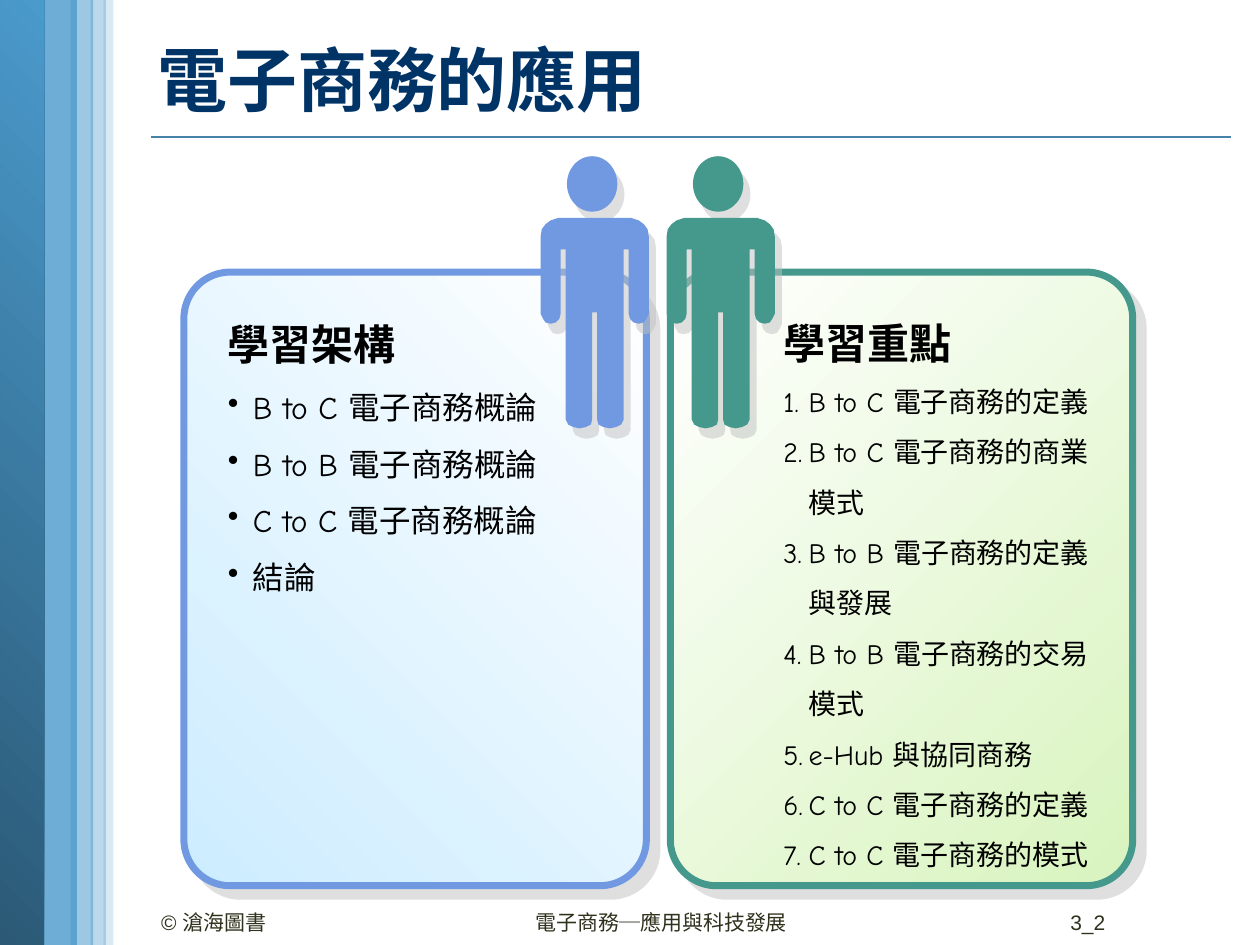
from dataclasses import dataclass

from lxml import etree
from pptx import Presentation
from pptx import util as u
from pptx.dml.color import RGBColor
from pptx.enum import shapes, text
from pptx.oxml.ns import qn


@dataclass(frozen=True)
class Theme:
    navy: str = "003366"
    rule: str = "4582A7"
    band: str = "4A9ACC"
    band_dark: str = "2B5976"
    blue: str = "7099E2"
    sky: str = "CCECFF"
    green: str = "44988C"
    lime: str = "D8F4BE"
    white: str = "FFFFFF"
    black: str = "000000"
    footer: str = "30311D"
    shadow: str = "C0C0C0"
    body_font: str = "Comic Neue"
    footer_font: str = "Arial"
    title_size: int = 40
    heading_size: int = 24
    left_size: int = 18
    right_size: int = 16
    footer_size: int = 12


theme = Theme()


def style_shape(shape, fill, angle=0, alpha=100, line=None, shadow=None):
    if isinstance(fill, tuple):
        shape.fill.gradient()
        shape.fill.gradient_angle = angle
        for stop, color, position in zip(shape.fill.gradient_stops, fill, (0, 1)):
            stop.color.rgb = RGBColor.from_string(color)
            stop.position = position
    else:
        shape.fill.solid()
        shape.fill.fore_color.rgb = RGBColor.from_string(fill)
        if alpha < 100:
            color = shape._element.spPr.find(qn("a:solidFill"))[0]
            etree.SubElement(color, qn("a:alpha"), val=str(alpha * 1000))
    if line:
        shape.line.color.rgb = RGBColor.from_string(line)
        shape.line.width = u.Pt(4)
    else:
        shape.line.fill.background()
    shape.shadow.inherit = False
    if shadow:
        distance, direction = shadow
        effects = shape._element.spPr.find(qn("a:effectLst"))
        outer = etree.SubElement(effects, qn("a:outerShdw"), blurRad="0",
                                 dist=str(u.Pt(distance)), dir=str(direction * 60000),
                                 algn="ctr", rotWithShape="0")
        color = etree.SubElement(outer, qn("a:srgbClr"), val=theme.shadow)
        etree.SubElement(color, qn("a:alpha"), val="50000")


def write_text(frame, words, size, font=theme.body_font, color=theme.black, bold=False,
               align=text.PP_ALIGN.LEFT, spacing=None, bullet=None, first=True):
    frame.word_wrap = True
    para = frame.paragraphs[0] if first else frame.add_paragraph()
    para.alignment = align
    if spacing:
        para.line_spacing = spacing
    if bullet:
        properties = para._p.get_or_add_pPr()
        properties.set("marL", str(u.Inches(0.2)))
        properties.set("indent", str(u.Inches(-0.2)))
        tag, attribute, value = bullet
        etree.SubElement(properties, qn(tag)).set(attribute, value)
    span = para.add_run()
    span.text = words
    span.font.name = font
    span.font.size = u.Pt(size)
    span.font.bold = bold
    span.font.color.rgb = RGBColor.from_string(color)


deck = Presentation()
deck.slide_width, deck.slide_height = u.Inches(10), u.Inches(7.5)
page = deck.slides.add_slide(deck.slide_layouts[6])

rule = page.shapes.add_connector(shapes.MSO_CONNECTOR.STRAIGHT, u.Inches(1.2), u.Inches(1.09),
                                 u.Inches(9.77), u.Inches(1.09))
rule.line.color.rgb = RGBColor.from_string(theme.rule)
rule.line.width = u.Pt(1)
etree.SubElement(rule._element.spPr, qn("a:effectLst"))

bands = [
    (0.3, 0.31, theme.band, 80),
    (-0.01, 0.36, (theme.band_dark, theme.band), 100),
    (0.82, 0.08, theme.band, 20),
    (0.56, 0.18, theme.band, 54),
    (0.72, 0.12, theme.band, 37),
]
for left, width, fill, alpha in bands:
    band = page.shapes.add_shape(shapes.MSO_SHAPE.RECTANGLE, u.Inches(left), 0,
                                 u.Inches(width), u.Inches(7.5))
    style_shape(band, fill, angle=45, alpha=alpha)

title = page.shapes.add_textbox(u.Inches(1.15), u.Inches(0.07), u.Inches(8.7), u.Inches(1.11))
title.text_frame.vertical_anchor = text.MSO_ANCHOR.MIDDLE
write_text(title.text_frame, "電子商務的應用", theme.title_size, color=theme.navy, bold=True)

half_body = [
    (-0.29, 1.73), (-0.35, 1.75), (-0.39, 1.78), (-0.42, 1.82), (-0.43, 1.88),
    (-0.43, 2.49), (-0.41, 2.53), (-0.39, 2.56), (-0.35, 2.57), (-0.31, 2.56),
    (-0.28, 2.53), (-0.27, 2.49), (-0.27, 1.98), (-0.23, 1.98), (-0.23, 3.33),
    (-0.21, 3.37), (-0.17, 3.39), (-0.12, 3.4), (-0.07, 3.39), (-0.03, 3.37),
    (-0.02, 3.33), (-0.02, 2.48),
]
body_outline = half_body + [(-x, y) for x, y in reversed(half_body)]

dots = ("a:buChar", "char", "•")
numbers = ("a:buAutoNum", "type", "arabicPeriod")
cards = [
    (1.46, theme.blue, (theme.sky, theme.white), 45, 4.72, (1.71, 2.28, 3.1, 2.52),
     "學習架構", theme.left_size, dots,
     ["B to C 電子商務概論", "B to B 電子商務概論", "C to C 電子商務概論", "結論"]),
    (5.32, theme.green, (theme.white, theme.lime), 315, 5.72, (6.12, 2.27, 2.83, 4.75),
     "學習重點", theme.right_size, numbers,
     ["B to C 電子商務的定義", "B to C 電子商務的商業模式", "B to B 電子商務的定義與發展",
      "B to B 電子商務的交易模式", "e-Hub 與協同商務", "C to C 電子商務的定義",
      "C to C 電子商務的模式"]),
]
for left, color, fill, angle, center, place, heading, size, bullet, items in cards:
    card = page.shapes.add_shape(shapes.MSO_SHAPE.ROUNDED_RECTANGLE, u.Inches(left),
                                 u.Inches(2.16), u.Inches(3.67), u.Inches(4.87))
    card.adjustments[0] = 0.1
    style_shape(card, fill, angle=angle, line=color, shadow=(8.5, 45))

    head = page.shapes.add_shape(shapes.MSO_SHAPE.OVAL, u.Inches(center - 0.22),
                                 u.Inches(1.24), u.Inches(0.4), u.Inches(0.44))
    points = [(u.Inches(center + x), u.Inches(y)) for x, y in body_outline]
    builder = page.shapes.build_freeform(*points[0])
    builder.add_line_segments(points[1:], close=True)
    for part in (head, builder.convert_to_shape()):
        style_shape(part, color, shadow=(7.2, 56))

    box = page.shapes.add_textbox(*map(u.Inches, place))
    write_text(box.text_frame, heading, theme.heading_size, bold=True, spacing=1.5)
    for item in items:
        write_text(box.text_frame, item, size, spacing=1.5, bullet=bullet, first=False)

footers = [
    (1.18, 2.33, "© 滄海圖書", text.PP_ALIGN.LEFT),
    (8.15, 0.72, "3_2", text.PP_ALIGN.RIGHT),
    (4.15, 2.36, "電子商務─應用與科技發展", text.PP_ALIGN.LEFT),
]
for left, width, words, align in footers:
    box = page.shapes.add_textbox(u.Inches(left), u.Inches(7.17), u.Inches(width), u.Inches(0.26))
    write_text(box.text_frame, words, theme.footer_size, font=theme.footer_font,
               color=theme.footer, align=align)

deck.save("out.pptx")
